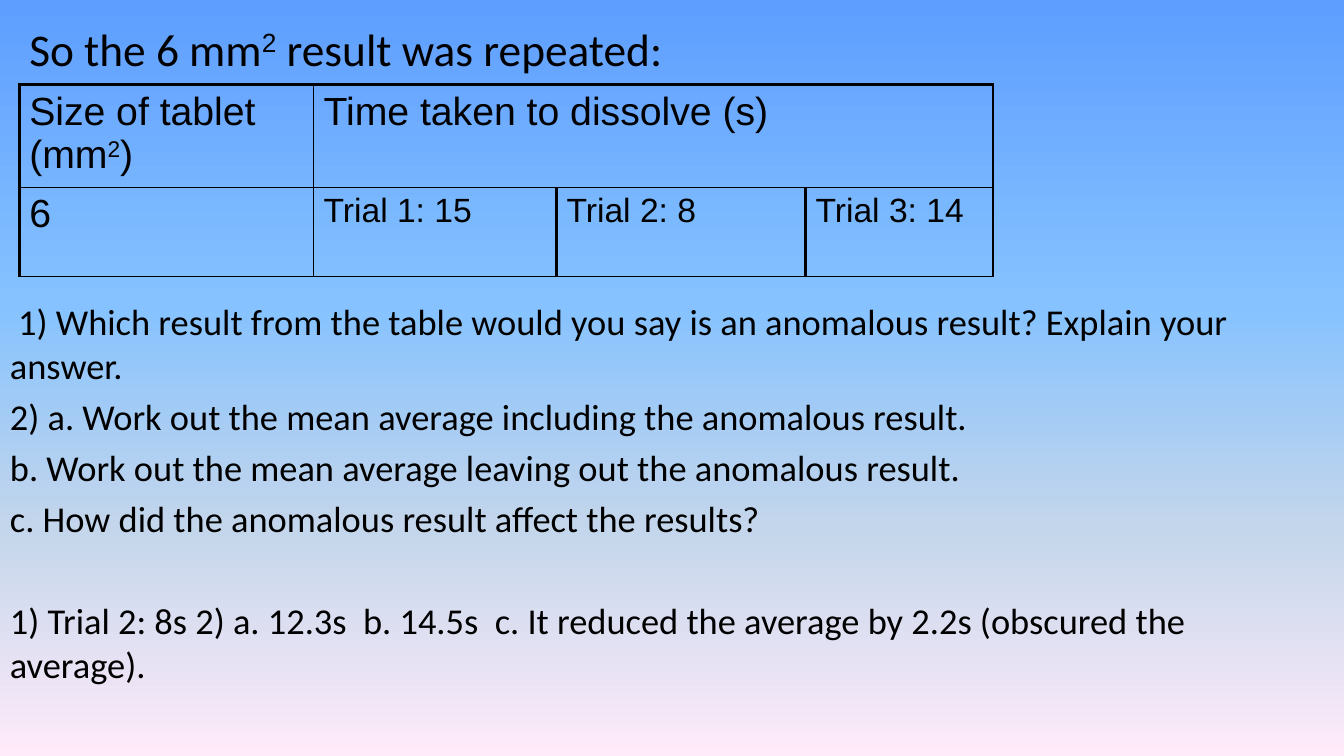
from lxml import etree
from pptx import Presentation
from pptx.dml.color import RGBColor
from pptx.enum import text
from pptx.oxml import parse_xml
from pptx.oxml.ns import nsdecls, qn
from pptx.util import Inches, Pt

BLACK = RGBColor(0, 0, 0)
SKY_STOPS = [
    (0, RGBColor(0x5E, 0x9E, 0xFF)),
    (40, RGBColor(0x85, 0xC2, 0xFF)),
    (70, RGBColor(0xC4, 0xD6, 0xEB)),
    (100, RGBColor(0xFF, 0xEB, 0xFA)),
]
THIN, THICK = 1, 2.25
COL_WIDTHS = [2.92, 2.41, 2.47, 1.86]
ROW_HEIGHTS = [1.02, 0.88]
CELLS = [
    [["Size of tablet (mm", "2", ")"], ["Time taken to dissolve (s)"], [], []],
    [["6"], ["Trial 1: 15"], ["Trial 2: 8"], ["Trial 3: 14"]],
]
QUESTIONS = [
    " 1) Which result from the table would you say is an anomalous result? Explain your answer.",
    "2) a. Work out the mean average including the anomalous result.",
    "b. Work out the mean average leaving out the anomalous result.",
    "c. How did the anomalous result affect the results?",
    "1) Trial 2: 8s 2) a. 12.3s  b. 14.5s  c. It reduced the average by 2.2s (obscured the average).",
]


def paint_background(s):
    stops = "".join(
        f'<a:gs pos="{pos * 1000}"><a:srgbClr val="{color}"/></a:gs>'
        for pos, color in SKY_STOPS
    )
    fill = s.background.fill
    fill.gradient()
    grad = s.element.find(".//" + qn("a:gradFill"))
    grad.getparent().replace(grad, parse_xml(
        f'<a:gradFill {nsdecls("a")} rotWithShape="1"><a:gsLst>{stops}</a:gsLst>'
        '<a:lin ang="5400000" scaled="0"/></a:gradFill>'
    ))


def add_run(p, words, size, font, superscript=False):
    r = p.add_run()
    r.text = words
    r.font.size = Pt(size)
    r.font.name = font
    r.font.color.rgb = BLACK
    if superscript:
        r._r.get_or_add_rPr().set("baseline", "30000")


def set_title(s, x, y, w, h):
    sp = s.shapes.title
    sp.left, sp.top, sp.width, sp.height = map(Inches, (x, y, w, h))
    tf = sp.text_frame
    tf.vertical_anchor = text.MSO_ANCHOR.MIDDLE
    p = tf.paragraphs[0]
    p.alignment = text.PP_ALIGN.LEFT
    add_run(p, "So the 6 mm", 32.4, "Calibri")
    add_run(p, "2", 32.4, "Arial", True)
    add_run(p, " result was repeated:", 32.4, "Calibri")


def set_borders(cell, left, top, right, bottom):
    tcPr = cell._tc.get_or_add_tcPr()
    sides = zip(("a:lnL", "a:lnR", "a:lnT", "a:lnB"), (left, right, top, bottom))
    for i, (tag, width) in enumerate(sides):
        ln = etree.Element(qn(tag), w=str(Pt(width)))
        fill = etree.SubElement(ln, qn("a:solidFill"))
        etree.SubElement(fill, qn("a:srgbClr"), val=str(BLACK))
        tcPr.insert(i, ln)


def add_results_table(s, x, y, w, h):
    frame = s.shapes.add_table(len(ROW_HEIGHTS), len(COL_WIDTHS),
                               Inches(x), Inches(y), Inches(w), Inches(h))
    table = frame.table
    table.first_row = table.horz_banding = False
    for column, width in zip(table.columns, COL_WIDTHS):
        column.width = Inches(width)
    for row, height in zip(table.rows, ROW_HEIGHTS):
        row.height = Inches(height)
    table.cell(0, 1).merge(table.cell(0, 3))
    last = len(COL_WIDTHS) - 1
    for i, row in enumerate(CELLS):
        for j, parts in enumerate(row):
            cell = table.cell(i, j)
            cell.fill.background()
            set_borders(
                cell,
                left=THIN if j == 1 or i == 0 and j else THICK,
                top=THIN if i else THICK,
                right=THIN if j == 0 or i == 0 and j < last else THICK,
                bottom=THIN,
            )
            size = 24 if i and j else 28
            for k, words in enumerate(parts):
                add_run(cell.text_frame.paragraphs[0], words, size, "Arial", k == 1)


def add_questions(s, x, y, w, h):
    tf = s.shapes.add_textbox(Inches(x), Inches(y), Inches(w), Inches(h)).text_frame
    tf.word_wrap = True
    for i, words in enumerate(QUESTIONS):
        p = tf.paragraphs[0] if i == 0 else tf.add_paragraph()
        is_answer = i == len(QUESTIONS) - 1
        p.space_before = Pt(0 if i == 0 else 42 if is_answer else 5.2)
        add_run(p, words, 26, "Calibri")


def main():
    prs = Presentation()
    prs.slide_width, prs.slide_height = Inches(13.33), Inches(7.5)
    s = prs.slides.add_slide(prs.slide_layouts[5])
    paint_background(s)
    set_title(s, 0.19, 0.13, 12.9, 0.7)
    add_results_table(s, 0.19, 0.84, sum(COL_WIDTHS), sum(ROW_HEIGHTS))
    add_questions(s, 0, 2.92, 12.98, 4)
    prs.save("out.pptx")


if __name__ == "__main__":
    main()
